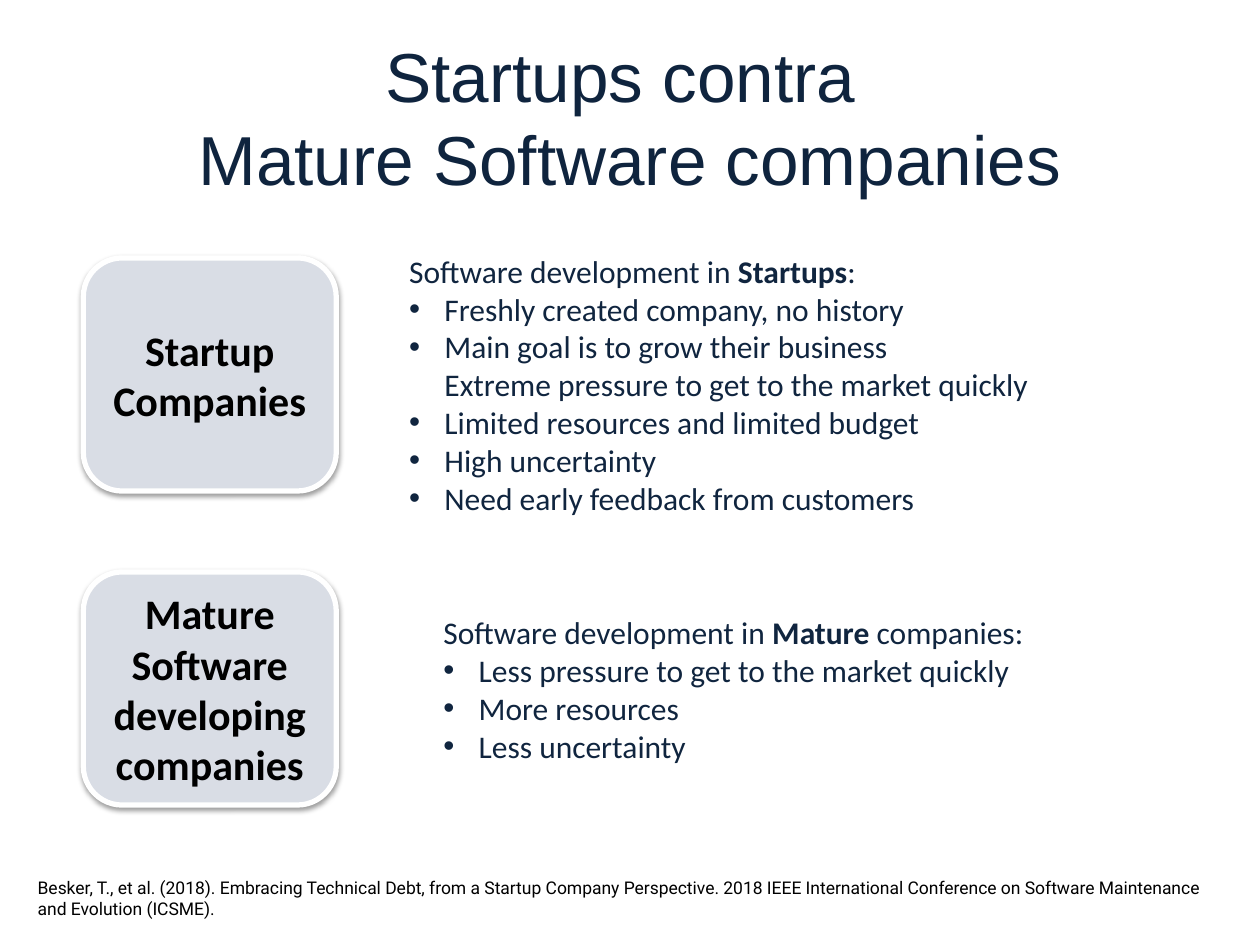
from copy import deepcopy
from dataclasses import dataclass

from lxml import etree
from pptx import Presentation
from pptx.dml.color import RGBColor
from pptx.enum.shapes import MSO_SHAPE
from pptx.enum.text import MSO_ANCHOR, MSO_AUTO_SIZE, PP_ALIGN
from pptx.oxml.ns import qn
from pptx.util import Cm, Pt

ROUNDED = MSO_SHAPE.ROUNDED_RECTANGLE
MIDDLE = MSO_ANCHOR.MIDDLE
CENTER = PP_ALIGN.CENTER
FIT_SHAPE, NO_FIT = MSO_AUTO_SIZE.SHAPE_TO_FIT_TEXT, MSO_AUTO_SIZE.NONE


@dataclass(frozen=True)
class TextStyle:
    font: str
    size: float
    color: str
    bold: bool = False


@dataclass(frozen=True)
class Theme:
    title: TextStyle = TextStyle("Arial", 39.6, "0F243E")
    card: TextStyle = TextStyle("Calibri", 24, "000000", True)
    body: TextStyle = TextStyle("Calibri", 18, "10253F")
    source: TextStyle = TextStyle("Roboto", 10, "000000")
    card_fill: str = "D9DDE5"
    card_line: str = "FFFFFF"
    shadow: str = "000000"


@dataclass(frozen=True)
class Section:
    label: str
    card_top: float
    text_box: tuple[float, float, float, float]  # left, top, width, height in cm
    lead: tuple[str, str, str]  # the middle part is bold
    bullets: tuple[str, ...]


THEME = Theme()
CARD_LEFT, CARD_WIDTH, CARD_HEIGHT = 1.68, 5.1, 4.7
BULLET_INDENT = Cm(0.71)

SECTIONS = (
    Section("Startup Companies", 5.2, (8, 4.95, 16.5, 5.64),
            ("Software development in ", "Startups", ":"),
            ("Freshly created company, no history",
             "Main goal is to grow their business \vExtreme pressure to get to the market quickly",
             "Limited resources and limited budget",
             "High uncertainty",
             "Need early feedback from customers")),
    Section("Mature Software developing companies", 11.53, (8.69, 12.24, 12.5, 3.33),
            ("Software development in ", "Mature", " companies:"),
            ("Less pressure to get to the market quickly",
             "More resources",
             "Less uncertainty")),
)
SOURCE = ("Besker, T., et al. (2018). Embracing Technical Debt, from a Startup Company "
          "Perspective. 2018 IEEE International Conference on Software Maintenance "
          "and Evolution (ICSME).")


def format_runs(p, style: TextStyle) -> None:
    for r in p.runs:
        r.font.name = style.font
        r.font.size = Pt(style.size)
        r.font.bold = style.bold
        r.font.color.rgb = RGBColor.from_string(style.color)
    # Line breaks take the size of the text around them
    for br in p._p.findall(qn("a:br")):
        br.insert(0, deepcopy(p.runs[0]._r.find(qn("a:rPr"))))


def add_shadow(shape) -> None:
    effects = etree.SubElement(shape._element.spPr, qn("a:effectLst"))
    outer = etree.SubElement(effects, qn("a:outerShdw"), blurRad=str(Pt(3.1)),
                             dist=str(Pt(1.6)), dir="5400000", rotWithShape="0")
    color = etree.SubElement(outer, qn("a:srgbClr"), val=THEME.shadow)
    etree.SubElement(color, qn("a:alpha"), val="38000")


def add_bullet(p) -> None:
    pPr = p._p.get_or_add_pPr()
    pPr.set("marL", str(BULLET_INDENT))
    pPr.set("indent", str(-BULLET_INDENT))
    etree.SubElement(pPr, qn("a:buFont"), typeface="Arial")
    etree.SubElement(pPr, qn("a:buChar"), char="•")


def add_text_box(s, left: float, top: float, width: float, height: float):
    tf = s.shapes.add_textbox(Cm(left), Cm(top), Cm(width), Cm(height)).text_frame
    tf.word_wrap = True
    tf.auto_size = FIT_SHAPE
    return tf


def draw_card(s, section: Section) -> None:
    sp = s.shapes.add_shape(ROUNDED, Cm(CARD_LEFT), Cm(section.card_top),
                            Cm(CARD_WIDTH), Cm(CARD_HEIGHT))
    sp.fill.solid()
    sp.fill.fore_color.rgb = RGBColor.from_string(THEME.card_fill)
    sp.line.color.rgb = RGBColor.from_string(THEME.card_line)
    sp.line.width = Pt(3)
    add_shadow(sp)
    tf = sp.text_frame
    tf.text = section.label
    tf.vertical_anchor = MIDDLE
    p = tf.paragraphs[0]
    p.alignment = CENTER
    format_runs(p, THEME.card)


def draw_points(s, section: Section) -> None:
    tf = add_text_box(s, *section.text_box)
    p = tf.paragraphs[0]
    for part in section.lead:
        p.add_run().text = part
    format_runs(p, THEME.body)
    p.runs[1].font.bold = True
    for bullet in section.bullets:
        p = tf.add_paragraph()
        add_bullet(p)
        p.text = bullet
        format_runs(p, THEME.body)


def draw_title(s, text: str) -> None:
    title = s.shapes.title
    title.left, title.top, title.width, title.height = Cm(1.27), Cm(0.76), Cm(22.86), Cm(3.18)
    tf = title.text_frame
    tf.text = text
    tf.auto_size = NO_FIT
    tf.vertical_anchor = MIDDLE
    p = tf.paragraphs[0]
    p.text = text
    p.alignment = CENTER
    format_runs(p, THEME.title)


def main() -> None:
    prs = Presentation()
    prs.slide_width, prs.slide_height = Cm(25.4), Cm(19.05)
    s = prs.slides.add_slide(prs.slide_layouts[5])

    draw_title(s, "Startups contra \vMature Software companies")

    # Company types with their characteristics
    for section in SECTIONS:
        draw_card(s, section)
        draw_points(s, section)

    # Reference
    tf = add_text_box(s, 0.51, 17.55, 24.38, 1.12)
    tf.text = SOURCE
    format_runs(tf.paragraphs[0], THEME.source)

    prs.save("out.pptx")


if __name__ == "__main__":
    main()
